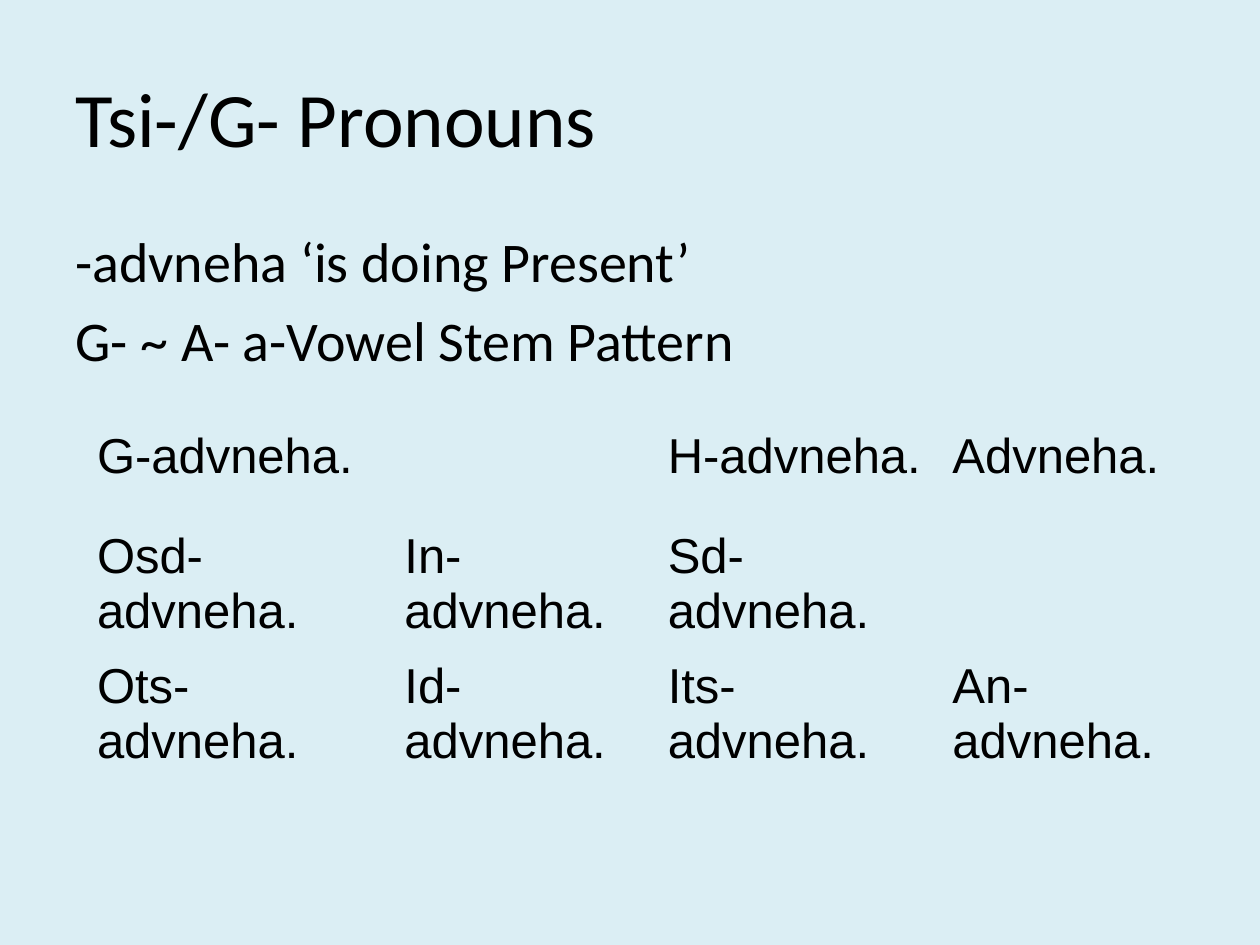
from pptx import Presentation
from pptx.dml.color import RGBColor
from pptx.enum.text import MSO_ANCHOR
from pptx.util import Inches, Pt

MIDDLE = MSO_ANCHOR.MIDDLE
TOP = MSO_ANCHOR.TOP
COLORS = {"background": "DBEEF4", "text": "000000"}
NO_STYLE_NO_GRID = "{2D5ABB26-0587-4C30-8999-92F81FD0307C}"


def style_paragraph(paragraph, font_name, size):
    paragraph.font.name = font_name
    paragraph.font.size = Pt(size)
    paragraph.font.color.rgb = RGBColor.from_string(COLORS["text"])


def add_text(slide, top, height, lines, size, anchor, space_before):
    box = slide.shapes.add_textbox(Inches(0.5), Inches(top), Inches(9), Inches(height))
    frame = box.text_frame
    frame.word_wrap = True
    frame.vertical_anchor = anchor
    frame.text = "\n".join(lines)
    for paragraph in frame.paragraphs:
        paragraph.space_before = Pt(space_before)
        style_paragraph(paragraph, "Calibri", size)


presentation = Presentation()
presentation.slide_width = Inches(10)
presentation.slide_height = Inches(7.5)
slide = presentation.slides.add_slide(presentation.slide_layouts[6])
slide.background.fill.solid()
slide.background.fill.fore_color.rgb = RGBColor.from_string(COLORS["background"])

add_text(slide, 0.3, 1.25, ["Tsi-/G- Pronouns"], 44, MIDDLE, 0)
add_text(
    slide, 1.75, 4.95,
    ["-advneha ‘is doing Present’", "G- ~ A- a-Vowel Stem Pattern"],
    32, TOP, 6.4,
)

verb_forms = [
    ["G-advneha.", "", "H-advneha.", "Advneha."],
    ["Osd-advneha.", "In-advneha.", "Sd-advneha.", ""],
    ["Ots-advneha.", "Id-advneha.", "Its-advneha.", "An-advneha."],
]
column_widths = [2.44, 2.09, 2.26, 2.26]

table = slide.shapes.add_table(
    len(verb_forms), len(column_widths),
    Inches(0.67), Inches(3.36), Inches(sum(column_widths)), Inches(2.36),
).table
table.first_row = False
table.horz_banding = False
table._tbl.tblPr[0].text = NO_STYLE_NO_GRID
for column, width in zip(table.columns, column_widths):
    column.width = Inches(width)
for row, forms in zip(table.rows, verb_forms):
    row.height = Inches(0.79)
    for cell, form in zip(row.cells, forms):
        cell.fill.background()
        cell.text = form
        style_paragraph(cell.text_frame.paragraphs[0], "Arial", 28)

presentation.save("out.pptx")
